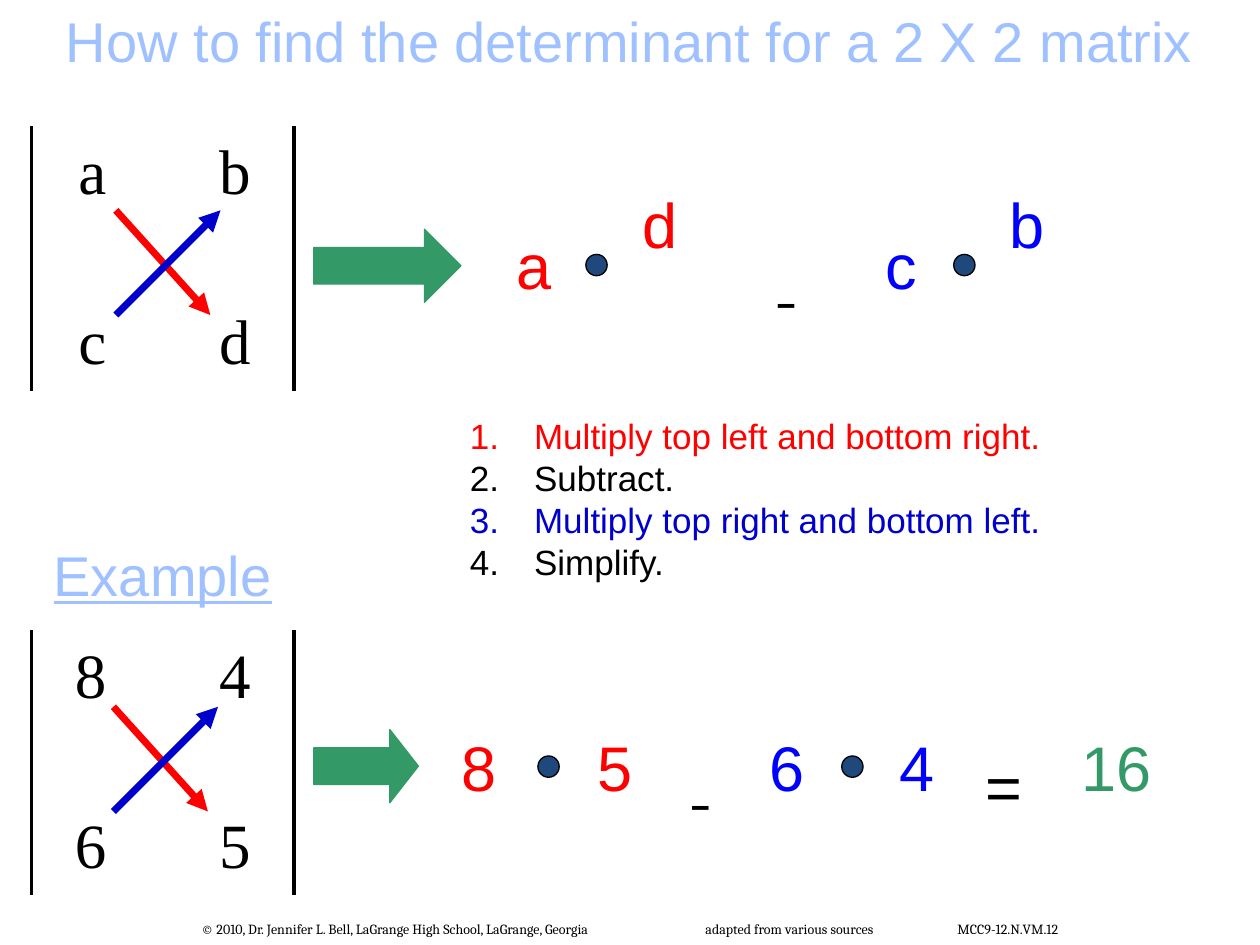
from pptx import Presentation
from pptx.dml.color import RGBColor
from pptx.enum.shapes import MSO_CONNECTOR, MSO_SHAPE
from pptx.enum.text import MSO_ANCHOR, MSO_AUTO_SIZE, PP_ALIGN
from pptx.oxml.ns import qn
from pptx.util import Pt
from lxml.etree import SubElement

HUES = {
    "black": "000000", "red": "FF0000", "blue": "0000FF", "navy": "0000CC",
    "green": "339966", "dot": "1F497D", "sky": "A0C1FF",
}
TITLE = "How to find the determinant for a 2 X 2 matrix"
STEPS = [
    ("Multiply top left and bottom right.", "red"),
    ("Subtract.", "black"),
    ("Multiply top right and bottom left.", "navy"),
    ("Simplify.", "black"),
]
FOOT = ("© 2010, Dr. Jennifer L. Bell, LaGrange High School, LaGrange, Georgia"
        "\t\tadapted from various sources\t\tMCC9-12.N.VM.12")
ROWS = [
    {
        "grid": [["a", "b"], ["c", "d"]], "top": 72, "cross": (66.2, 120.2),
        "arrow": (179.3, 131, 84.2, 41.8), "head": 0.5,
        "terms": [
            ("a", "red", 287.3, 126, 36, 51.1),
            ("d", "red", 359.3, 102.2, 36, 75.6),
            ("-", "black", 431.3, 145.4, 36, 12.2),
            ("c", "blue", 496.8, 126, 36, 51.1),
            ("b", "blue", 568.8, 102.2, 36, 75.6),
        ],
        "dots": [(334.8, 145.4), (545, 145.4)],
    },
    {
        "grid": [["8", "4"], ["6", "5"]], "top": 360, "cross": (64.8, 403.9),
        "arrow": (179.3, 416.9, 59.8, 41.8), "head": 0.39,
        "terms": [
            ("8", "red", 252.7, 412.6, 41.8, 51.1),
            ("5", "red", 333.4, 412.6, 36, 51.1),
            ("-", "black", 382.3, 432, 36, 12.2),
            ("6", "blue", 432, 412.6, 36, 51.1),
            ("4", "blue", 506.2, 412.6, 36, 51.1),
            ("=", "black", 555.8, 423.4, 30.2, 30.2),
            ("16", "green", 599, 412.6, 77.8, 51.1),
        ],
        "dots": [(307.4, 432), (481, 432)],
    },
]


def rgb(hue):
    return RGBColor.from_string(HUES[hue])


def write(para, text, size=36, face="Arial", hue="black",
          align=PP_ALIGN.CENTER, under=None):
    para.alignment = align
    run = para.add_run()
    run.text = text
    font = run.font
    font.size, font.name, font.underline = Pt(size), face, under
    font.color.rgb = rgb(hue)


def add_box(home, spot, wrap=True):
    frame = home.add_textbox(*map(Pt, spot)).text_frame
    frame.word_wrap = wrap
    return frame


def add_form(home, kind, spot, fill, line):
    form = home.add_shape(kind, *map(Pt, spot))
    form.shadow.inherit = False
    form.fill.solid()
    form.fill.fore_color.rgb = rgb(fill)
    form.line.color.rgb = rgb(line)
    form.line.width = Pt(0.75)
    return form


def add_ray(home, ends, hue):
    ray = home.add_connector(MSO_CONNECTOR.STRAIGHT, *map(Pt, ends))
    ray.line.color.rgb = rgb(hue)
    ray.line.width = Pt(4)
    SubElement(ray.line._get_or_add_ln(), qn("a:tailEnd"), type="triangle")
    SubElement(ray._element.spPr, qn("a:effectLst"))


def edge(cell, shown):
    props = cell._tc.get_or_add_tcPr()
    for side in ("lnL", "lnR", "lnT", "lnB"):
        if side == shown:
            line = SubElement(props, qn("a:" + side), w=str(Pt(2.25)))
            fill = SubElement(line, qn("a:solidFill"))
            SubElement(fill, qn("a:srgbClr"), val=HUES["black"])
        else:
            line = SubElement(props, qn("a:" + side))
            SubElement(line, qn("a:noFill"))
    cell.fill.background()


def add_grid(home, grid, top):
    table = home.add_table(3, 3, Pt(18), Pt(top), Pt(150), Pt(151.2)).table
    table.first_row = table.horz_banding = False
    for row in table.rows:
        row.height = Pt(50.4)
    for col in table.columns:
        col.width = Pt(50)
    for r in range(3):
        for c, side in enumerate(("lnL", None, "lnR")):
            edge(table.cell(r, c), side)
    for r, pair in enumerate(grid):
        for c, text in enumerate(pair):
            cell = table.cell(2 * r, 2 * c)
            cell.vertical_anchor = (MSO_ANCHOR.BOTTOM, MSO_ANCHOR.TOP)[r]
            write(cell.text_frame.paragraphs[0], text, face="Times New Roman",
                  align=(PP_ALIGN.RIGHT, PP_ALIGN.LEFT)[c])


def add_row(home, row):
    add_grid(home, row["grid"], row["top"])
    group = home.add_group_shape().shapes
    arrow = add_form(group, MSO_SHAPE.RIGHT_ARROW, row["arrow"], "green", "green")
    arrow.adjustments[1] = row["head"]
    for text, hue, *spot in row["terms"]:
        face = "Montserrat" if text == "-" else "Arial"
        frame = add_box(group, spot, wrap=False)
        write(frame.paragraphs[0], text, face=face, hue=hue)
    for x, y in row["dots"]:
        add_form(group, MSO_SHAPE.OVAL, (x, y, 12.2, 12.2), "dot", "black")
    x, y = row["cross"]
    low = y + 59.8
    add_ray(home, (x, y, x + 54, low), "red")
    add_ray(home, (x, low, x + 59.8, y), "navy")


def add_title(title):
    title.left, title.top, title.width, title.height = map(Pt, (0, 0, 720, 46))
    frame = title.text_frame
    frame.auto_size = MSO_AUTO_SIZE.NONE
    frame.vertical_anchor = MSO_ANCHOR.TOP
    para = frame.paragraphs[0]
    para.space_after = Pt(12)
    write(para, TITLE, size=32, hue="sky")


def add_steps(home):
    frame = add_box(home, (261.4, 233.3, 341.3, 104.4))
    for i, (text, hue) in enumerate(STEPS):
        para = frame.add_paragraph() if i else frame.paragraphs[0]
        props = para._p.get_or_add_pPr()
        props.set("marL", str(Pt(36.7)))
        props.set("indent", str(-Pt(36.7)))
        SubElement(props, qn("a:buFont"), typeface="+mj-lt")
        SubElement(props, qn("a:buAutoNum"), type="arabicPeriod")
        write(para, text, size=20, hue=hue, align=PP_ALIGN.LEFT)


def main():
    deck = Presentation()
    deck.slide_width, deck.slide_height = Pt(720), Pt(540)
    shapes = deck.slides.add_slide(deck.slide_layouts[5]).shapes
    add_title(shapes.title)
    for row in ROWS:
        add_row(shapes, row)
    add_steps(shapes)
    head = add_box(shapes, (18, 305.3, 150, 46))
    write(head.paragraphs[0], "Example", size=32, hue="sky", under=True)
    foot = add_box(shapes, (0, 522.7, 720, 17.3))
    write(foot.paragraphs[0], FOOT, size=8, face="Cambria")
    deck.save("out.pptx")


if __name__ == "__main__":
    main()
